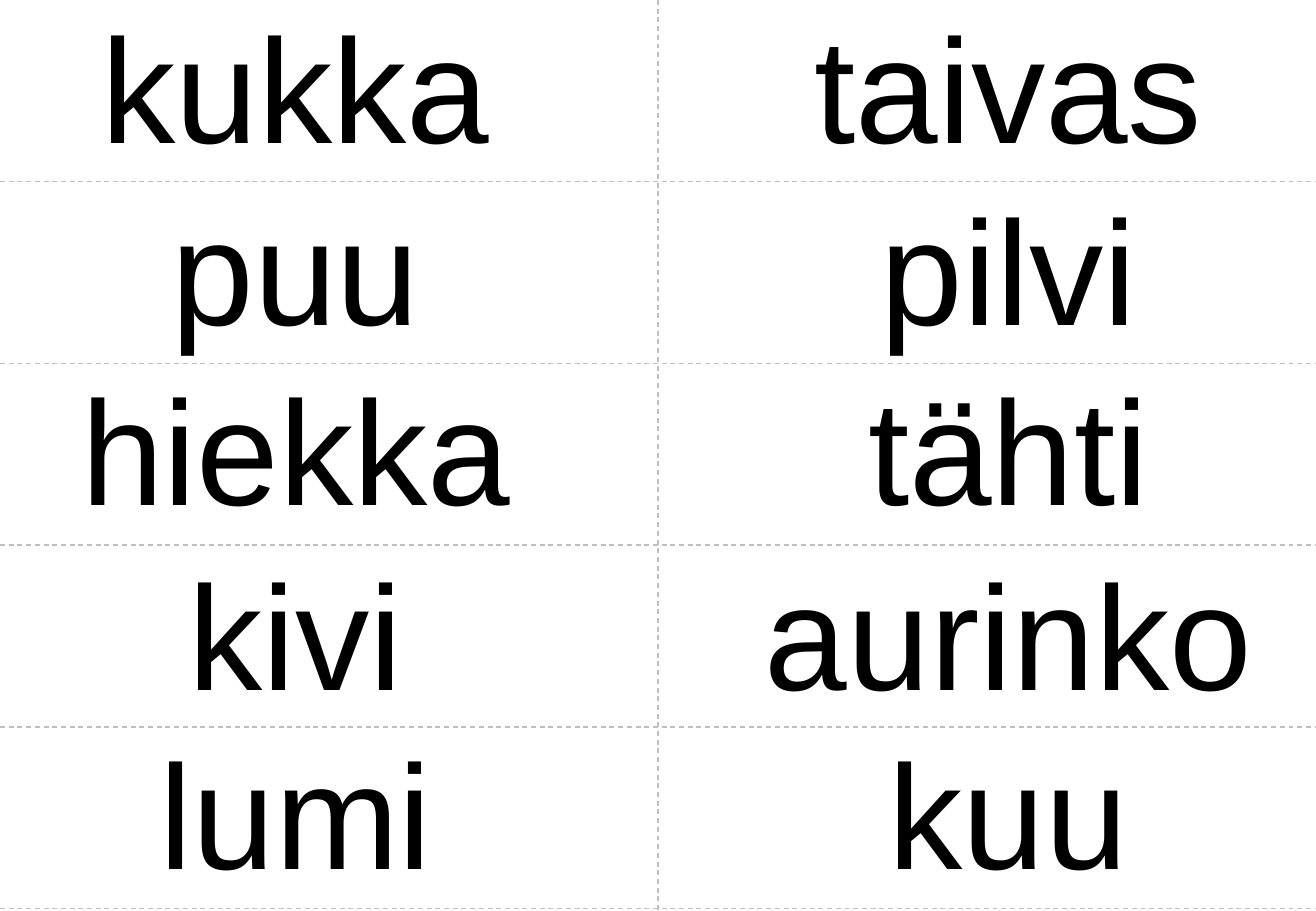
"""Build a sheet of ten Finnish word cards with dashed cutting lines."""
from lxml.etree import SubElement
from pptx import Presentation
from pptx.dml.color import RGBColor
from pptx.enum.dml import MSO_LINE
from pptx.enum.shapes import MSO_CONNECTOR
from pptx.enum.text import MSO_AUTO_SIZE, PP_ALIGN
from pptx.oxml.ns import qn
from pptx.util import Cm, Pt

COLUMNS = [
    (6.18, [("kukka", 8.4), ("puu", 5.46), ("hiekka", 9.27), ("kivi", 4.78), ("lumi", 5.97)]),
    (21.08, [("taivas", 8.4), ("pilvi", 5.64), ("tähti", 6.15), ("aurinko", 10.46), ("kuu", 5.28)]),
]
TOPS = [-0.23, 3.58, 7.34, 11.2, 14.94]
WIDTH, HEIGHT = 27.51, 19.05
ROW = 3.8
TALL = 3.76
INSET = 0.13
BLACK = RGBColor(0, 0, 0)
GREY = RGBColor(0xBF, 0xBF, 0xBF)


def add_word(slide, word, mid, top, wide):
    box = slide.shapes.add_textbox(Cm(mid - wide / 2), Cm(top), Cm(wide), Cm(TALL))
    frame = box.text_frame
    frame.margin_left = frame.margin_right = Cm(INSET)
    frame.margin_top = frame.margin_bottom = Cm(INSET)
    frame.word_wrap = False
    frame.auto_size = MSO_AUTO_SIZE.SHAPE_TO_FIT_TEXT
    frame.text = word
    para = frame.paragraphs[0]
    para.alignment = PP_ALIGN.CENTER
    font = para.runs[0].font
    font.name = "Arial"
    font.size = Pt(88)
    font.color.rgb = BLACK


def add_cut(slide, x1, y1, x2, y2):
    cut = slide.shapes.add_connector(MSO_CONNECTOR.STRAIGHT, Cm(x1), Cm(y1), Cm(x2), Cm(y2))
    cut.line.color.rgb = GREY
    cut.line.width = Pt(0.75)
    cut.line.dash_style = MSO_LINE.DASH
    SubElement(cut._element.spPr, qn("a:effectLst"))


def main():
    deck = Presentation()
    deck.slide_width, deck.slide_height = Cm(WIDTH), Cm(HEIGHT)
    slide = deck.slides.add_slide(deck.slide_layouts[6])
    for mid, words in COLUMNS:
        for (word, wide), top in zip(words, TOPS):
            add_word(slide, word, mid, top, wide)
    add_cut(slide, WIDTH / 2, 0, WIDTH / 2, HEIGHT)
    for row in range(1, len(TOPS) + 1):
        add_cut(slide, 0, row * ROW, WIDTH, row * ROW)
    deck.save("out.pptx")


if __name__ == "__main__":
    main()
